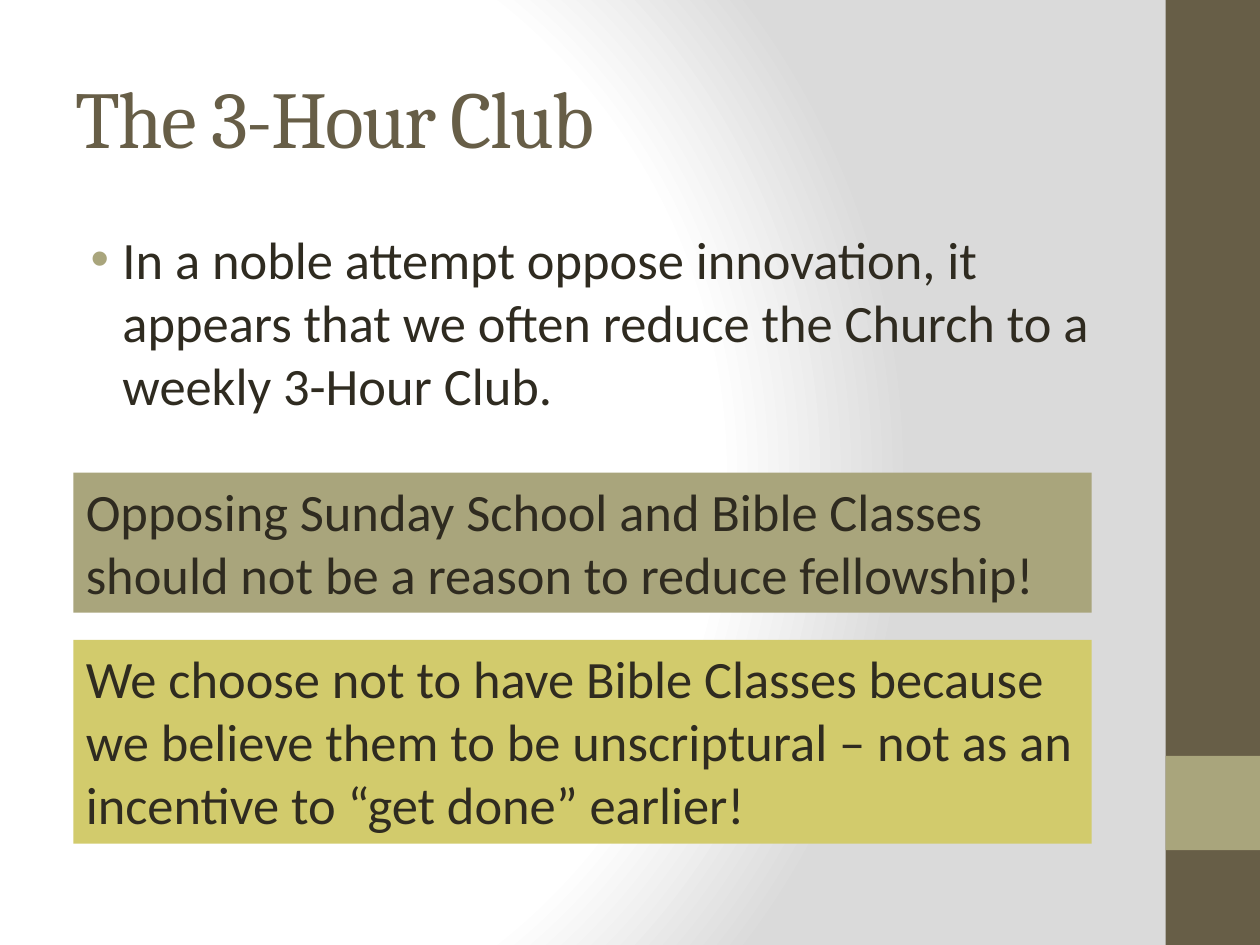
import pptx
import pptx.dml.color
import pptx.enum.shapes
import pptx.enum.text
import pptx.oxml
import pptx.oxml.ns
import pptx.util
from dataclasses import dataclass
from pptx.util import Cm

BROWN, SAGE, OLIVE, INK = "675E47", "A9A57C", "D2CB6C", "2F2B20"
MARGIN, CONTENT_WIDTH = 1.27, 21.17
SIDEBAR_LEFT, SIDEBAR_WIDTH, SLIDE_HEIGHT = 23.5, 1.9, 19.05


@dataclass
class Block:
    """A filled rectangle, in centimetres, with optional text."""
    left: float
    top: float
    width: float
    height: float
    fill: str
    text: str = ""


BLOCKS = [
    # Sidebar and its accent square
    Block(SIDEBAR_LEFT, 0, SIDEBAR_WIDTH, SLIDE_HEIGHT, BROWN),
    Block(SIDEBAR_LEFT, 15.24, SIDEBAR_WIDTH, SIDEBAR_WIDTH, SAGE),
    # Statements
    Block(1.48, 9.53, 20.53, 2.82, SAGE,
          "Opposing Sunday School and Bible Classes should not be a reason "
          "to reduce fellowship!"),
    Block(1.48, 12.9, 20.53, 4.11, OLIVE,
          "We choose not to have Bible Classes because we believe them to be "
          "unscriptural – not as an incentive to “get done” earlier!"),
]


def color(value: str) -> pptx.dml.color.RGBColor:
    return pptx.dml.color.RGBColor.from_string(value)


def write(frame, text: str, size: float = 30, font: str = "Calibri",
          ink: str = INK, anchor=pptx.enum.text.MSO_ANCHOR.TOP):
    """Fill a text frame with one left-aligned paragraph and return it."""
    frame.text = text
    frame.word_wrap = True
    frame.auto_size = pptx.enum.text.MSO_AUTO_SIZE.NONE
    frame.vertical_anchor = anchor
    paragraph = frame.paragraphs[0]
    paragraph.alignment = pptx.enum.text.PP_ALIGN.LEFT
    run_font = paragraph.runs[0].font
    run_font.size = pptx.util.Pt(size)
    run_font.name = font
    run_font.color.rgb = color(ink)
    return paragraph


def draw_block(slide, block: Block) -> None:
    rectangle = slide.shapes.add_shape(
        pptx.enum.shapes.MSO_SHAPE.RECTANGLE, Cm(block.left), Cm(block.top),
        Cm(block.width), Cm(block.height))
    rectangle.shadow.inherit = False
    rectangle.fill.solid()
    rectangle.fill.fore_color.rgb = color(block.fill)
    rectangle.line.fill.background()
    if block.text:
        write(rectangle.text_frame, block.text)


def add_bullet(paragraph, bullet_color: str, left: float, hang: float) -> None:
    properties = paragraph._p.get_or_add_pPr()
    properties.set("marL", str(Cm(left)))
    properties.set("indent", str(-Cm(hang)))
    namespace = pptx.oxml.ns.nsdecls("a")
    for xml in (
        f'<a:buClr {namespace}><a:srgbClr val="{bullet_color}"/></a:buClr>',
        f'<a:buFont {namespace} typeface="Arial"/>',
        f'<a:buChar {namespace} char="•"/>',
    ):
        properties.append(pptx.oxml.parse_xml(xml))


def set_radial_background(slide, stops: list[tuple[int, str]]) -> None:
    stop_xml = "".join(
        f'<a:gs pos="{percent * 1000}"><a:srgbClr val="{value}"/></a:gs>'
        for percent, value in stops)
    slide._element.cSld.insert(0, pptx.oxml.parse_xml(
        f'<p:bg {pptx.oxml.ns.nsdecls("p", "a")}><p:bgPr>'
        f'<a:gradFill rotWithShape="1"><a:gsLst>{stop_xml}</a:gsLst>'
        '<a:path path="circle"><a:fillToRect l="20000" t="50000" '
        'r="100000" b="50000"/></a:path></a:gradFill>'
        '<a:effectLst/></p:bgPr></p:bg>'))


def main() -> None:
    presentation = pptx.Presentation()
    presentation.slide_width = Cm(25.4)
    presentation.slide_height = Cm(SLIDE_HEIGHT)
    slide = presentation.slides.add_slide(presentation.slide_layouts[5])
    set_radial_background(
        slide, [(0, "FFFFFF"), (75, "FFFFFF"), (100, "DADADA")])

    # Title
    title = slide.shapes.title
    title.left, title.top = Cm(MARGIN), Cm(0.76)
    title.width, title.height = Cm(CONTENT_WIDTH), Cm(3.18)
    heading = write(title.text_frame, "The 3-Hour Club", 46, "Cambria", BROWN,
                    pptx.enum.text.MSO_ANCHOR.MIDDLE)
    heading.runs[0].font._element.set("spc", "-100")

    # Bulleted point
    point = slide.shapes.add_textbox(
        Cm(MARGIN), Cm(4.45), Cm(CONTENT_WIDTH), Cm(4.88))
    paragraph = write(
        point.text_frame,
        "In a noble attempt oppose innovation, it appears that we often "
        "reduce the Church to a weekly 3-Hour Club.")
    add_bullet(paragraph, SAGE, left=0.95, hang=0.64)

    # Sidebar and statements
    for block in BLOCKS:
        draw_block(slide, block)

    presentation.save("out.pptx")


if __name__ == "__main__":
    main()
